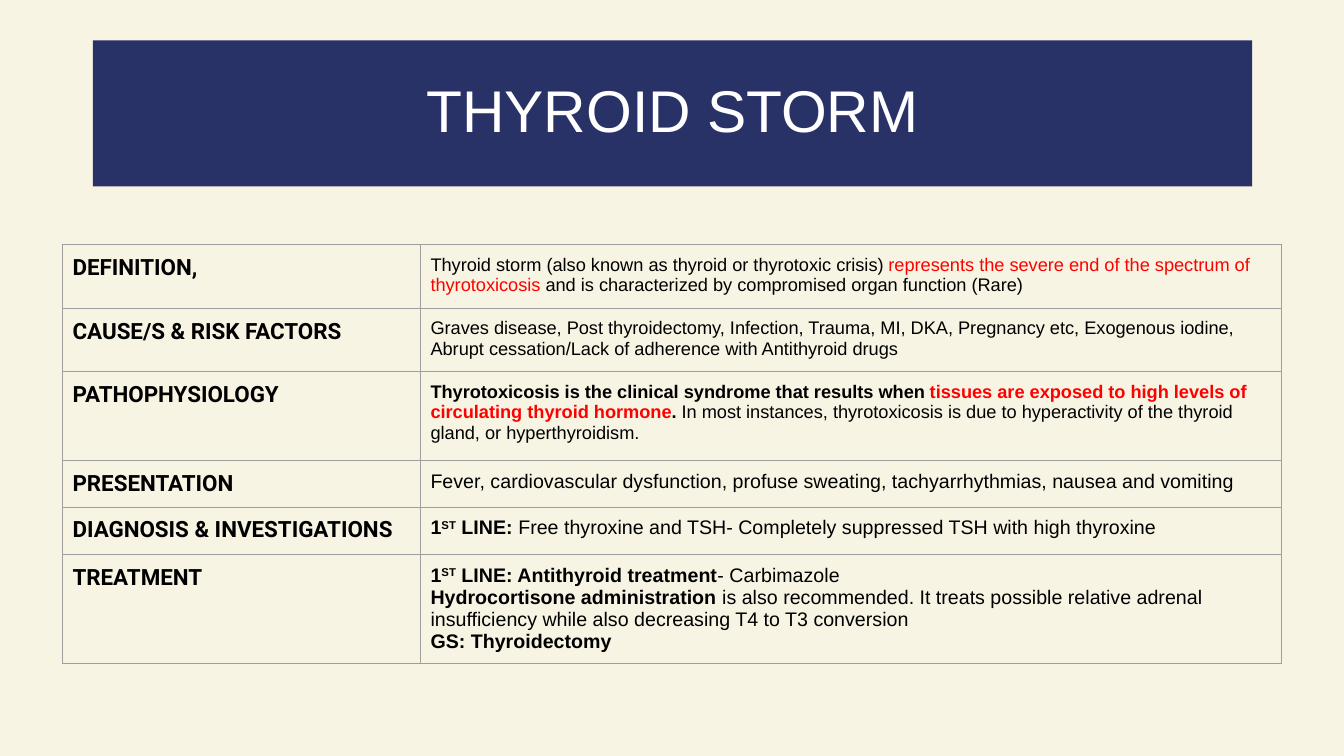
from lxml.etree import SubElement
from pptx import Presentation
from pptx.dml.color import RGBColor
from pptx.enum.text import MSO_ANCHOR, MSO_AUTO_SIZE, PP_ALIGN
from pptx.oxml.ns import qn
from pptx.util import Inches, Pt

CREAM = RGBColor(0xF8, 0xF4, 0xE4)
NAVY = RGBColor(0x29, 0x32, 0x67)
WHITE = RGBColor(0xFF, 0xFF, 0xFF)
BLACK = RGBColor(0x00, 0x00, 0x00)
RED = RGBColor(0xFF, 0x00, 0x00)
GREY = RGBColor(0x9E, 0x9E, 0x9E)

PLAIN = {}
BOLD = {"bold": True}
ALERT = {"color": RED}
BOLD_ALERT = {"bold": True, "color": RED}
RAISED = {"bold": True, "raised": True}

COLUMN_WIDTHS = (3.55, 8.54)
FIRST_LINE = [("1", BOLD), ("ST", RAISED)]

ROWS = [
    ("DEFINITION,", 0.63, 13, [[
        ("Thyroid storm (also known as thyroid or thyrotoxic crisis)", PLAIN),
        (" represents the severe end of the spectrum of thyrotoxicosis ", ALERT),
        ("and is characterized by compromised organ function (Rare)", PLAIN),
    ]]),
    ("CAUSE/S & RISK FACTORS", 0.63, 13, [[
        ("Graves disease, Post thyroidectomy, Infection, Trauma, MI, DKA, Pregnancy etc, "
         "Exogenous iodine, Abrupt cessation/Lack of adherence with Antithyroid drugs", PLAIN),
    ]]),
    ("PATHOPHYSIOLOGY", 0.88, 13, [[
        ("Thyrotoxicosis is the clinical syndrome that results when ", BOLD),
        ("tissues are exposed to high levels of circulating thyroid hormone", BOLD_ALERT),
        (". ", BOLD),
        ("In most instances, thyrotoxicosis is due to hyperactivity of the thyroid gland, "
         "or hyperthyroidism.", PLAIN),
    ]]),
    ("PRESENTATION", 0.46, 14, [[
        ("Fever, cardiovascular dysfunction, profuse sweating, tachyarrhythmias, "
         "nausea and vomiting", PLAIN),
    ]]),
    ("DIAGNOSIS & INVESTIGATIONS", 0.47, 14, [
        FIRST_LINE + [
            (" LINE: ", BOLD),
            ("Free thyroxine and TSH- Completely suppressed TSH with high thyroxine", PLAIN),
        ],
    ]),
    ("TREATMENT", 1.08, 14, [
        FIRST_LINE + [(" LINE: Antithyroid treatment", BOLD), ("- Carbimazole", PLAIN)],
        [("Hydrocortisone administration ", BOLD),
         ("is also recommended. It treats possible relative adrenal", PLAIN)],
        [("insufficiency while also decreasing T4 to T3 conversion", PLAIN)],
        [("GS: Thyroidectomy", BOLD)],
    ]),
]


class SlideBuilder:
    body_font = "Arial"
    label_font = "Roboto"
    label_size = 16
    cell_margin = Inches(0.1)

    def __init__(self, presentation):
        self.slide = presentation.slides.add_slide(presentation.slide_layouts[5])
        fill = self.slide.background.fill
        fill.solid()
        fill.fore_color.rgb = CREAM

    def format_run(self, run, name, size, bold=False, color=BLACK, raised=False):
        run.font.name = name
        run.font.size = Pt(size)
        run.font.bold = bold
        run.font.color.rgb = color
        if raised:
            run._r.get_or_add_rPr().set("baseline", "30000")

    def add_title(self, text, left, top, width, height):
        title = self.slide.shapes.title
        title.left, title.top = Inches(left), Inches(top)
        title.width, title.height = Inches(width), Inches(height)
        title.fill.solid()
        title.fill.fore_color.rgb = NAVY
        text_frame = title.text_frame
        text_frame.text = text
        text_frame.auto_size = MSO_AUTO_SIZE.NONE
        text_frame.vertical_anchor = MSO_ANCHOR.MIDDLE
        paragraph = text_frame.paragraphs[0]
        paragraph.alignment = PP_ALIGN.CENTER
        paragraph.line_spacing = 0.9
        self.format_run(paragraph.runs[0], self.body_font, 42, color=WHITE)

    def format_cell(self, cell):
        cell.margin_left = cell.margin_right = self.cell_margin
        cell.margin_top = cell.margin_bottom = self.cell_margin
        properties = cell._tc.get_or_add_tcPr()
        for side in ("a:lnL", "a:lnR", "a:lnT", "a:lnB"):
            line = SubElement(properties, qn(side), w=str(Pt(0.75)))
            solid = SubElement(line, qn("a:solidFill"))
            SubElement(solid, qn("a:srgbClr"), val=str(GREY))
        cell.fill.background()

    def fill_cell(self, cell, paragraphs, name, size):
        self.format_cell(cell)
        text_frame = cell.text_frame
        for index, pieces in enumerate(paragraphs):
            paragraph = text_frame.add_paragraph() if index else text_frame.paragraphs[0]
            for text, style in pieces:
                run = paragraph.add_run()
                run.text = text
                self.format_run(run, name, size, **style)

    def add_table(self, rows, left, top):
        width = sum(COLUMN_WIDTHS)
        height = sum(row[1] for row in rows)
        table = self.slide.shapes.add_table(
            len(rows), len(COLUMN_WIDTHS),
            Inches(left), Inches(top), Inches(width), Inches(height)).table
        table.first_row = False
        table.horz_banding = False
        for column, column_width in zip(table.columns, COLUMN_WIDTHS):
            column.width = Inches(column_width)
        for index, (label, row_height, size, paragraphs) in enumerate(rows):
            table.rows[index].height = Inches(row_height)
            self.fill_cell(table.cell(index, 0), [[(label, BOLD)]],
                           self.label_font, self.label_size)
            self.fill_cell(table.cell(index, 1), paragraphs, self.body_font, size)


def main():
    presentation = Presentation()
    presentation.slide_width = Inches(13.33)
    presentation.slide_height = Inches(7.5)
    builder = SlideBuilder(presentation)
    builder.add_title("THYROID STORM", 0.92, 0.4, 11.5, 1.45)
    builder.add_table(ROWS, 0.62, 2.43)
    presentation.save("out.pptx")


if __name__ == "__main__":
    main()
